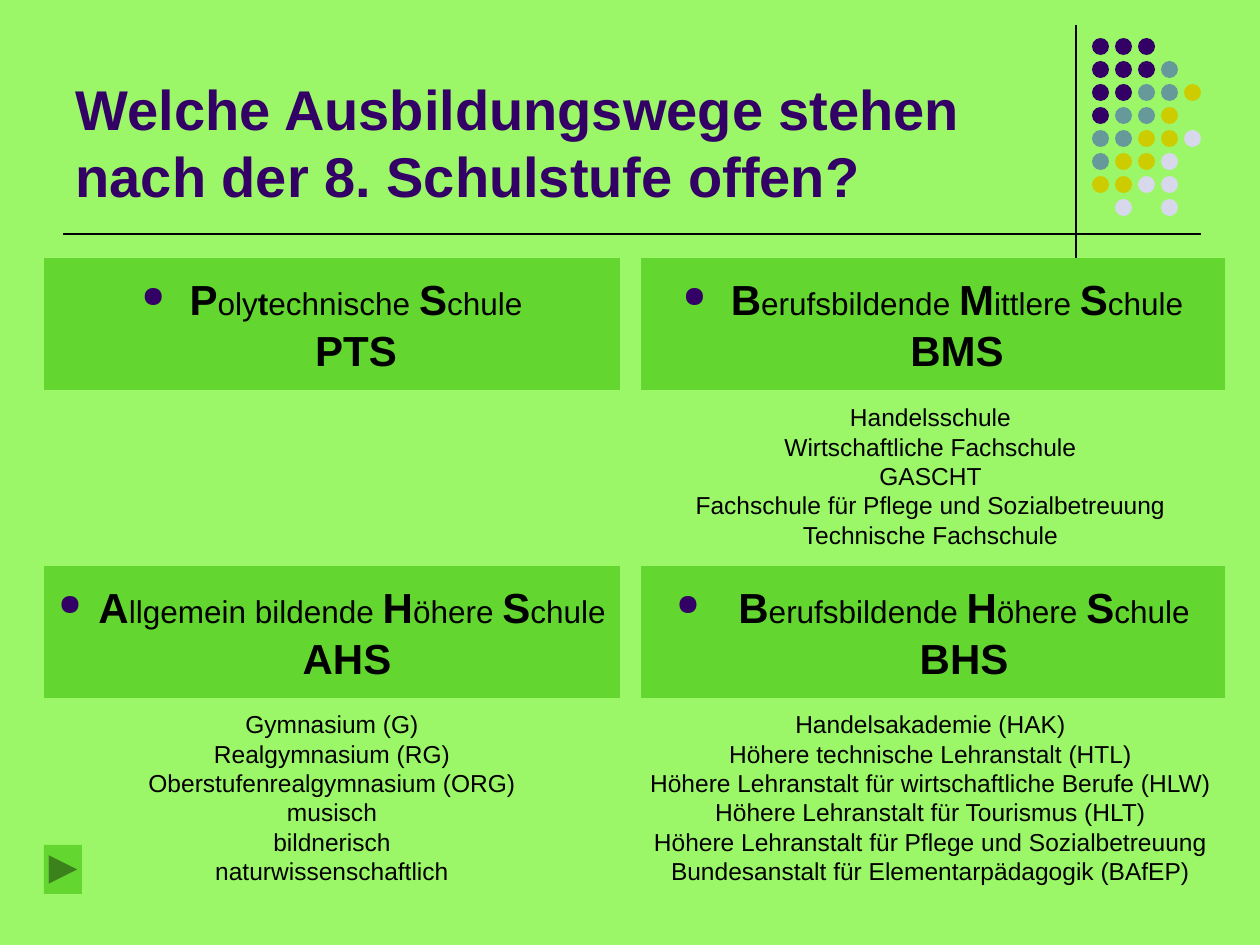
from lxml import etree
from pptx import Presentation
from pptx.dml.color import RGBColor
from pptx.enum.shapes import MSO_CONNECTOR, MSO_SHAPE
from pptx.enum.text import MSO_ANCHOR, MSO_AUTO_SIZE, PP_ALIGN
from pptx.oxml.ns import qn
from pptx.util import Pt

PX = 914400 / 126
BACK = RGBColor(0x9B, 0xF6, 0x68)
GREEN = RGBColor(0x63, 0xD7, 0x2F)
PLUM = RGBColor(0x33, 0x00, 0x66)
TEAL = RGBColor(0x66, 0x99, 0x99)
GOLD = RGBColor(0xCC, 0xCC, 0x00)
PALE = RGBColor(0xD8, 0xD8, 0xEC)
BLACK = RGBColor(0, 0, 0)

LINE = MSO_CONNECTOR.STRAIGHT
RECT = MSO_SHAPE.RECTANGLE
OVAL = MSO_SHAPE.OVAL
NEXT = MSO_SHAPE.ACTION_BUTTON_FORWARD_OR_NEXT
LEFT, CENTER = PP_ALIGN.LEFT, PP_ALIGN.CENTER
MIDDLE, BOTTOM = MSO_ANCHOR.MIDDLE, MSO_ANCHOR.BOTTOM
FIXED, GROW = MSO_AUTO_SIZE.NONE, MSO_AUTO_SIZE.SHAPE_TO_FIT_TEXT

TITLE = "Welche Ausbildungswege stehen nach der 8. Schulstufe offen?"
DOTS = ["PPP", "PPPT", "PPTTG", "PTTG", "TTGGL", "TGGL", "GGLL", " L L"]
TONES = {"P": PLUM, "T": TEAL, "G": GOLD, "L": PALE}

# Left, top, width, bullet indent, text; bold parts stand between stars
HEADS = [
    (641, 258, 584, 48, "*B*erufsbildende *M*ittlere *S*chule\n*BMS*"),
    (44, 258, 576, 48, "*P*oly*t*echnische *S*chule\n*PTS*"),
    (44, 566, 576, 30, "* A*llgemein bildende *H*öhere *S*chule\n*AHS*"),
    (641, 566, 584, 62, "*B*erufsbildende *H*öhere *S*chule\n*BHS*"),
]
LISTS = [
    ((638, 396, 585, 161), [
        "Handelsschule\nWirtschaftliche Fachschule",
        "GASCHT",
        "Fachschule für Pflege und Sozialbetreuung",
        "Technische Fachschule"]),
    ((44, 703, 576, 189), [
        "Gymnasium (G)\nRealgymnasium (RG)\nOberstufenrealgymnasium (ORG)\n"
        "musisch\nbildnerisch\nnaturwissenschaftlich"]),
    ((620, 703, 621, 190), [
        "Handelsakademie (HAK)",
        "Höhere technische Lehranstalt (HTL)",
        "Höhere Lehranstalt für wirtschaftliche Berufe (HLW)",
        "Höhere Lehranstalt für Tourismus (HLT)",
        "Höhere Lehranstalt für Pflege und Sozialbetreuung\n"
        "Bundesanstalt für Elementarpädagogik (BAfEP)"]),
]


def px(*nums):
    return [round(n * PX) for n in nums]


def add_text(para, text, size, color=BLACK, bold=False):
    """Add runs to a paragraph, with a line break at each newline."""
    for i, part in enumerate(text.split("\n")):
        if i:
            para.add_line_break()
        if part:
            run = para.add_run()
            run.text = part
            font = run.font
            font.name, font.size, font.bold = "Arial", Pt(size), bold
            font.color.rgb = color


def add_line(slide, *ends):
    line = slide.shapes.add_connector(LINE, *px(*ends))
    line.line.color.rgb = BLACK
    line.line.width = Pt(0.75)
    etree.SubElement(line._element.spPr, qn("a:effectLst"))


def add_block(shapes, kind, box, color):
    block = shapes.add_shape(kind, *px(*box))
    block.shadow.inherit = False
    block.fill.solid()
    block.fill.fore_color.rgb = color
    block.line.fill.background()
    return block


def add_dots(slide):
    group = slide.shapes.add_group_shape()
    for row, marks in enumerate(DOTS):
        for col, mark in enumerate(marks):
            if mark in TONES:
                box = (1092 + 23 * col, 38 + 23 * row, 17, 17)
                add_block(group.shapes, OVAL, box, TONES[mark])


def add_title(slide):
    title = slide.shapes.title
    title.left, title.top, title.width, title.height = px(63, 16, 997, 199)
    frame = title.text_frame
    frame.word_wrap = True
    frame.auto_size = FIXED
    frame.vertical_anchor = BOTTOM
    para = frame.paragraphs[0]
    para.alignment = LEFT
    add_text(para, TITLE, 32, PLUM, True)


def add_bullet(para, indent):
    props = para._p.get_or_add_pPr()
    step, = px(indent)
    props.set("marL", str(step))
    props.set("indent", str(-step))
    tone = etree.SubElement(props, qn("a:buClr"))
    etree.SubElement(tone, qn("a:srgbClr"), val=str(PLUM))
    etree.SubElement(props, qn("a:buSzPct"), val="70000")
    etree.SubElement(props, qn("a:buChar"), char="●")


def add_head(slide, left, top, width, indent, text):
    block = add_block(slide.shapes, RECT, (left, top, width, 132), GREEN)
    frame = block.text_frame
    frame.word_wrap = True
    frame.vertical_anchor = MIDDLE
    frame.margin_left, frame.margin_right = px(10, 10)
    para = frame.paragraphs[0]
    para.alignment = CENTER
    add_bullet(para, indent)
    for i, part in enumerate(text.split("*")):
        size = 24 if part.isupper() else 18
        add_text(para, part, size, bold=i % 2 == 1)


def add_list(slide, box, items):
    frame = slide.shapes.add_textbox(*px(*box)).text_frame
    frame.word_wrap = True
    frame.auto_size = GROW
    for i, item in enumerate(items):
        para = frame.add_paragraph() if i else frame.paragraphs[0]
        para.alignment = CENTER
        add_text(para, item, 14)


def main():
    prs = Presentation()
    prs.slide_width, prs.slide_height = px(1260, 945)
    slide = prs.slides.add_slide(prs.slide_layouts[5])
    fill = slide.background.fill
    fill.solid()
    fill.fore_color.rgb = BACK
    add_line(slide, 1076, 25, 1076, 258)
    add_dots(slide)
    add_line(slide, 63, 234, 1201, 234)
    add_title(slide)
    for head in HEADS:
        add_head(slide, *head)
    add_block(slide.shapes, NEXT, (44, 845, 38, 49), GREEN)
    for box, items in LISTS:
        add_list(slide, box, items)
    prs.save("out.pptx")


if __name__ == "__main__":
    main()
